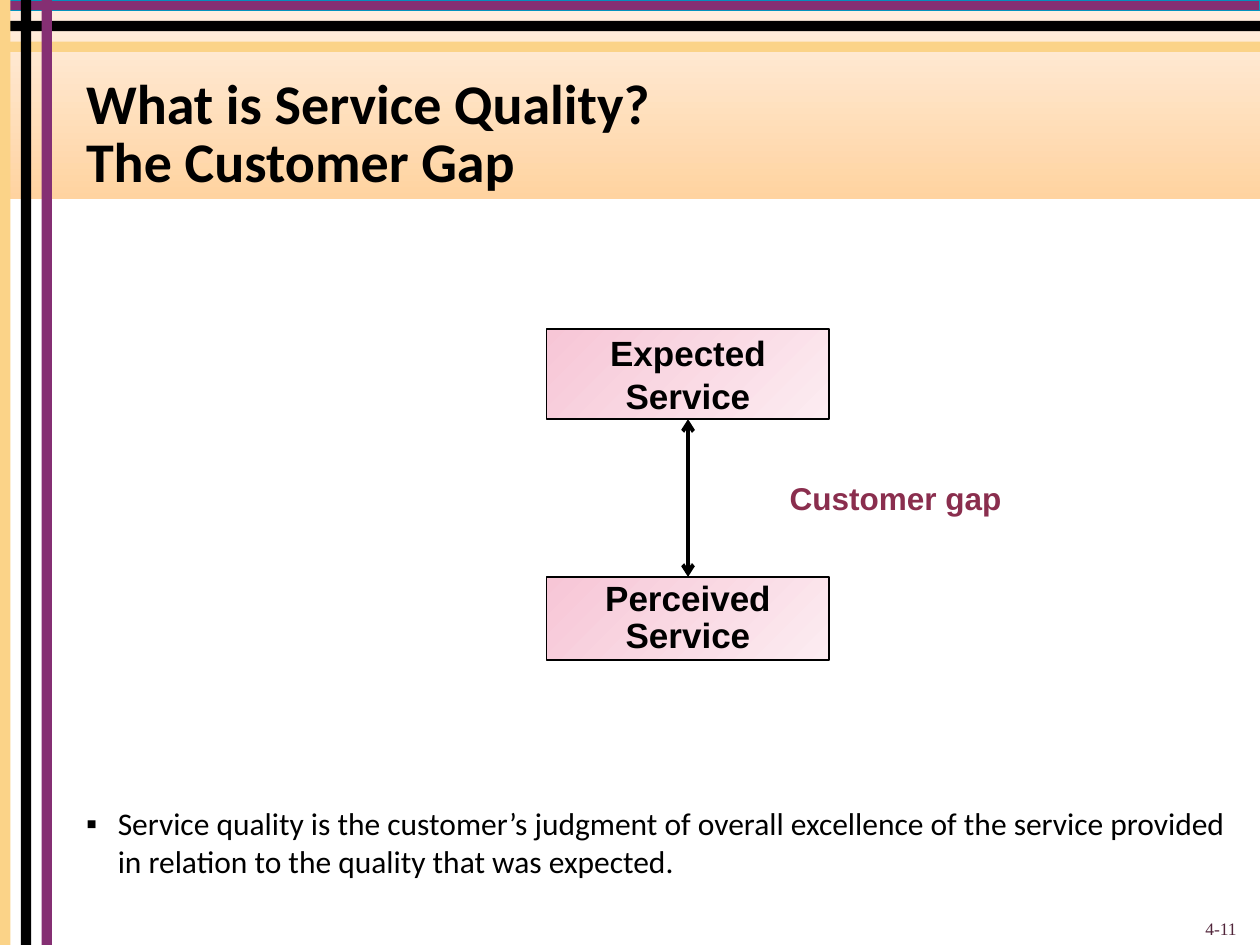
from lxml import etree
from pptx import Presentation
from pptx.dml.color import RGBColor
from pptx.enum import shapes as sh, text as tx
from pptx.oxml import ns
from pptx.util import Cm, Pt

HUES = {
    "black": "000000", "plum": "852F73", "gold": "FBD388", "teal": "0391BD",
    "peach": "FFD3A0", "cream": "FFF0E3", "pink": "F7C6D6", "blush": "FCECF1",
    "wine": "8A2E4E", "dusk": "51253A",
}
WIDE, HIGH = 25.4, 19.05


def hue(name):
    return RGBColor.from_string(HUES[name])


def style(frame, size, color="black", font="Calibri", bold=False, align=tx.PP_ALIGN.LEFT):
    frame.word_wrap = True
    for para in frame.paragraphs:
        para.alignment = align
        for run in para.runs:
            run.font.size, run.font.name, run.font.bold = Pt(size), font, bold
            run.font.color.rgb = hue(color)


def place(item, box):
    item.left, item.top, item.width, item.height = (Cm(n) for n in box)


def rect(slide, box, fill, angle=0):
    """Add a borderless rectangle; a pair of colours makes a gradient."""
    shape = slide.shapes.add_shape(sh.MSO_SHAPE.RECTANGLE, *(Cm(n) for n in box))
    shape.shadow.inherit = False
    shape.line.fill.background()
    if isinstance(fill, tuple):
        shape.fill.gradient()
        shape.fill.gradient_angle = angle
        for stop, name, spot in zip(shape.fill.gradient_stops, fill, (0, 1)):
            stop.color.rgb, stop.position = hue(name), spot
    else:
        shape.fill.solid()
        shape.fill.fore_color.rgb = hue(fill)
    return shape


def label(slide, box, words, **look):
    item = slide.shapes.add_textbox(*(Cm(n) for n in box))
    item.text_frame.text = words
    style(item.text_frame, **look)
    return item


def frame(slide):
    """Draw the title band and the crossing bars along the top and left edges."""
    thick, step = 0.21, 0.42
    rect(slide, (0, 0, WIDE, 4.01), ("peach", "cream"), 90)
    for slot, color in ((0, "plum"), (2, "gold"), (1, "black")):
        bar = rect(slide, (0, slot * step, WIDE, thick), color)
        if slot == 0:
            bar.line.color.rgb, bar.line.width = hue("teal"), 0
    for slot, color in ((2, "plum"), (0, "gold"), (1, "black")):
        rect(slide, (slot * step, 0, thick, HIGH), color)


def holder(slide, item, box, words, size, bold=False):
    """Fill a placeholder and bring it in front of the frame."""
    slide.shapes.element.append(item.element)
    place(item, box)
    item.text_frame.text = words
    item.text_frame.auto_size = tx.MSO_AUTO_SIZE.NONE
    style(item.text_frame, size, bold=bold)
    return item.text_frame.paragraphs[0]


def heading(slide, box):
    words = "What is Service Quality?\vThe Customer Gap"
    para = holder(slide, slide.shapes.title, box, words, 32, True)
    para.line_spacing = 0.85


def summary(slide, box):
    words = ("Service quality is the customer’s judgment of overall excellence of "
             "the service provided in relation to the quality that was expected.")
    para = holder(slide, slide.placeholders[1], box, words, 18)
    para.space_before = Pt(3.6)
    props = para._p.get_or_add_pPr()
    props.set("marL", str(Cm(0.64)))
    props.set("indent", str(-Cm(0.64)))
    etree.SubElement(props, ns.qn("a:buChar")).set("char", "▪")


def node(slide, box, words, space):
    shape = rect(slide, box, ("pink", "blush"), 315)
    shape.line.color.rgb, shape.line.width = hue("black"), Pt(1)
    body = shape.text_frame
    body.text = words
    body.margin_left = body.margin_right = Cm(0.13)
    body.margin_top = body.margin_bottom = Cm(0.05)
    body.vertical_anchor = tx.MSO_ANCHOR.MIDDLE
    style(body, 20, font="Arial", bold=True, align=tx.PP_ALIGN.CENTER)
    body.paragraphs[0].line_spacing = space
    return shape


def arrow(slide, start, end):
    """Join the bottom of one node to the top of another, with two heads."""
    line = slide.shapes.add_connector(sh.MSO_CONNECTOR.STRAIGHT, 0, 0, 0, 0)
    line.begin_connect(start, 2)
    line.end_connect(end, 0)
    line.line.color.rgb, line.line.width = hue("black"), Pt(2.25)
    pen = line.line._get_or_add_ln()
    for tag in ("a:headEnd", "a:tailEnd"):
        etree.SubElement(pen, ns.qn(tag)).set("type", "arrow")
    etree.SubElement(line.element.spPr, ns.qn("a:effectLst"))


def gap(slide, box):
    """Draw expected and perceived service with the gap between them."""
    left, top, wide, high = box
    low = 1.68
    first = node(slide, (left, top, wide, 1.82), "Expected Service", 1)
    last = node(slide, (left, top + high - low, wide, low), "Perceived Service", 0.9)
    arrow(slide, first, last)
    label(slide, (left + 4.65, top + 2.9, 5.08, 1.02), "Customer gap",
          size=18, color="wine", font="Arial", bold=True)


def number(slide, box):
    item = label(slide, box, "4-11", size=10, color="dusk",
                 font="Times New Roman", align=tx.PP_ALIGN.RIGHT)
    item.text_frame.vertical_anchor = tx.MSO_ANCHOR.BOTTOM


def main():
    deck = Presentation()
    deck.slide_width, deck.slide_height = Cm(WIDE), Cm(HIGH)
    slide = deck.slides.add_slide(deck.slide_layouts[1])
    frame(slide)
    heading(slide, (1.48, 1.48, 23.5, 2.54))
    summary(slide, (1.48, 16.09, 23.5, 2.12))
    gap(slide, (11.02, 6.63, 5.7, 6.68))
    number(slide, (19.26, 17.78, 5.92, 1.27))
    deck.save("out.pptx")


if __name__ == "__main__":
    main()
